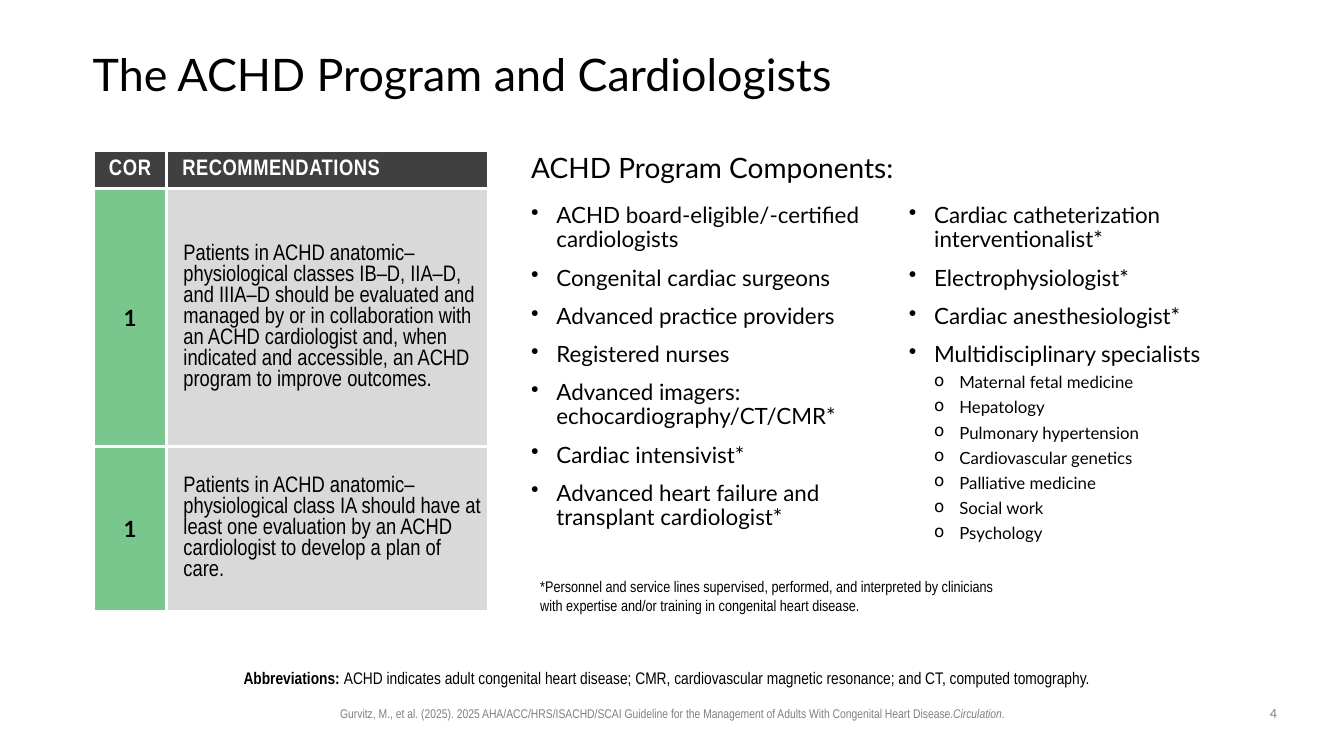
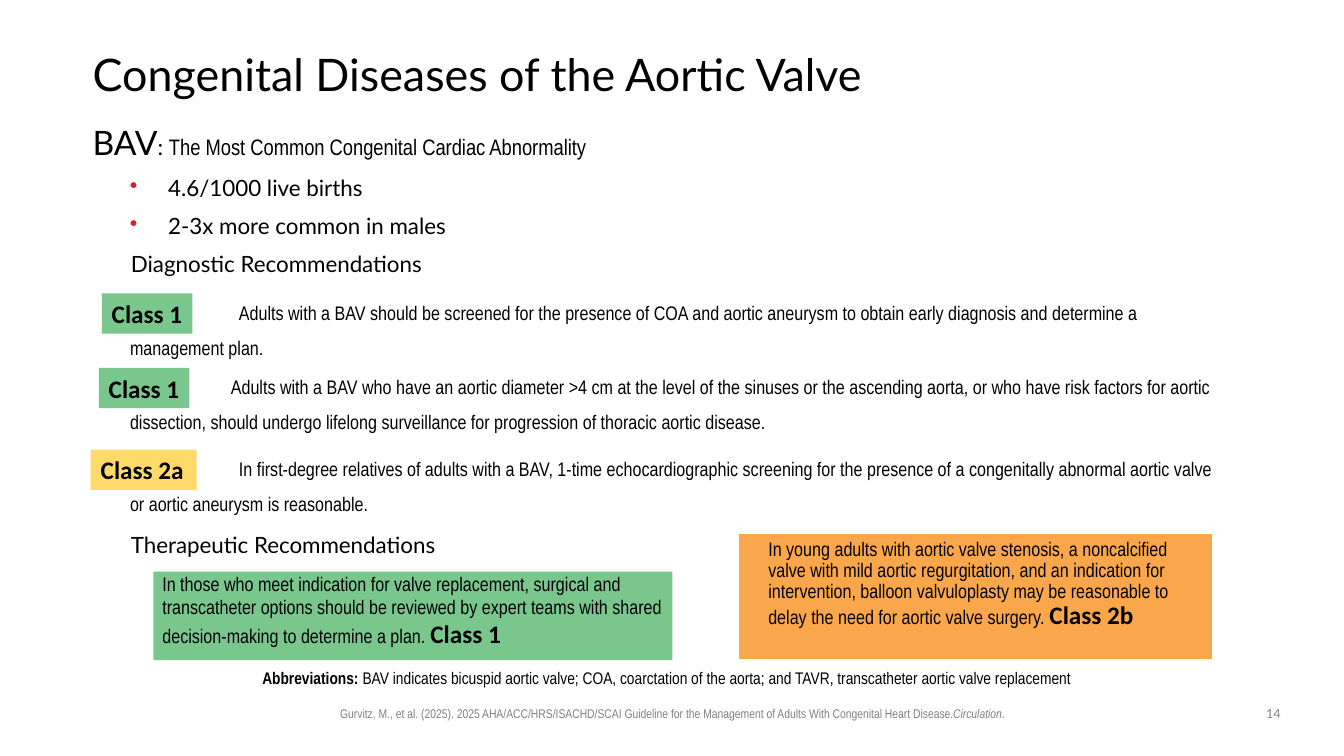
from dataclasses import dataclass

from lxml import etree
from pptx import Presentation
from pptx import util as u
from pptx.dml.color import RGBColor
from pptx.enum import shapes, text
from pptx.oxml import ns

ALIGN, ANCHOR = text.PP_ALIGN, text.MSO_ANCHOR


@dataclass(frozen=True)
class Theme:
    heading: str = "Lato"
    body: str = "Arial Narrow"
    label: str = "Calibri"
    black: str = "000000"
    white: str = "FFFFFF"
    grey: str = "808080"
    header: str = "404040"
    cell: str = "D9D9D9"
    green: str = "79C78D"
    yellow: str = "FFDA68"
    orange: str = "FAA74B"
    bullet: str = "CF242A"
    title_pt: int = 32
    lead_pt: int = 24
    subhead_pt: int = 20
    class_pt: int = 18
    text_pt: int = 16
    rec_pt: int = 14
    small_pt: int = 12
    note_pt: int = 11
    footer_pt: int = 9


T = Theme()
LABEL = dict(font=T.label, size=T.class_pt, bold=True)

COMPONENTS = [
    "ACHD board-eligible/-certified cardiologists",
    "Congenital cardiac surgeons",
    "Advanced practice providers",
    "Registered nurses",
    "Advanced imagers: echocardiography/CT/CMR*",
    "Cardiac intensivist*",
    "Advanced heart failure and transplant cardiologist*",
    "Cardiac catheterization interventionalist*",
    "Electrophysiologist*",
    "Cardiac anesthesiologist*",
    "Multidisciplinary specialists",
]
SPECIALISTS = [
    "Maternal fetal medicine", "Hepatology", "Pulmonary hypertension",
    "Cardiovascular genetics", "Palliative medicine", "Social work", "Psychology",
]
PROGRAM_RECS = [
    "Patients in ACHD anatomic–physiological classes IB–D, IIA–D, and IIIA–D should be "
    "evaluated and managed by or in collaboration with an ACHD cardiologist and, when "
    "indicated and accessible, an ACHD program to improve outcomes.",
    "Patients in ACHD anatomic–physiological class IA should have at least one evaluation "
    "by an ACHD cardiologist to develop a plan of care.",
]
# class, colour, badge left, top, width, start of the text, text
DIAGNOSTIC_RECS = [
    ("Class 1", T.green, 1.01, 2.91, 0.9, 2.37,
     "Adults with a BAV should be screened for the presence of COA and aortic aneurysm "
     "to obtain early diagnosis and determine a management plan."),
    ("Class 1", T.green, 0.98, 3.65, 0.9, 2.29,
     "Adults with a BAV who have an aortic diameter >4 cm at the level of the sinuses or "
     "the ascending aorta, or who have risk factors for aortic dissection, should undergo "
     "lifelong surveillance for progression of thoracic aortic disease."),
    ("Class 2a", T.yellow, 0.9, 4.46, 1.05, 2.37,
     "In first-degree relatives of adults with a BAV, 1-time echocardiographic screening "
     "for the presence of a congenitally abnormal aortic valve or aortic aneurysm is "
     "reasonable."),
]


def add_run(p, words, font=T.body, size=T.text_pt, color=T.black, bold=False,
            italic=False, tracking=0):
    r = p.add_run()
    r.text = words
    f = r.font
    f.name, f.size, f.bold, f.italic = font, u.Pt(size), bold, italic
    f.color.rgb = RGBColor.from_string(color)
    if tracking:
        r._r.get_or_add_rPr().set("spc", str(round(tracking * 100)))


def add_bullet(pPr, char, color):
    if color:
        clr = etree.SubElement(pPr, ns.qn("a:buClr"))
        etree.SubElement(clr, ns.qn("a:srgbClr"), val=color)
    etree.SubElement(pPr, ns.qn("a:buChar"), char=char)


def add_para(tf, runs, align=ALIGN.LEFT, line=None, before=0, left=0, first=0,
             level=0, bullet=None, bullet_color=None, **fmt):
    """Add a paragraph; runs is a string or a list of (string, format) pairs."""
    p = tf.paragraphs[0]
    if p.runs:
        p = tf.add_paragraph()
        p.space_before = u.Pt(before)
    p.alignment, p.level = align, level
    if line:
        p.line_spacing = line
    pPr = p._p.get_or_add_pPr()
    pPr.set("marL", str(u.Inches(left)))
    pPr.set("indent", str(u.Inches(first)))
    if bullet:
        add_bullet(pPr, bullet, bullet_color)
    for words, extra in [(runs, {})] if isinstance(runs, str) else runs:
        add_run(p, words, **{**fmt, **extra})


def set_frame(tf, insets=(0.1, 0.05, 0.1, 0.05), anchor=ANCHOR.TOP, wrap=True):
    tf.margin_left, tf.margin_top, tf.margin_right, tf.margin_bottom = map(u.Inches, insets)
    tf.vertical_anchor, tf.word_wrap = anchor, wrap
    return tf


def add_box(s, box, **frame):
    return set_frame(s.shapes.add_textbox(*map(u.Inches, box)).text_frame, **frame)


def add_panel(s, box, color, **frame):
    sp = s.shapes.add_shape(shapes.MSO_SHAPE.RECTANGLE, *map(u.Inches, box))
    sp.shadow.inherit = False
    sp.fill.solid()
    sp.fill.fore_color.rgb = RGBColor.from_string(color)
    sp.line.fill.background()
    return set_frame(sp.text_frame, **frame)


def add_slide(prs, title, abbreviations, number):
    """Add a slide with the title, abbreviations, citation and page number."""
    s = prs.slides.add_slide(prs.slide_layouts[6])
    tf = add_box(s, (0.92, 0.4, 11.5, 0.72), insets=(0, 0, 0, 0), anchor=ANCHOR.MIDDLE)
    add_para(tf, title, font=T.heading, size=T.title_pt, line=0.9)
    tf = add_box(s, (1.88, 6.42, 9.57, 0.46), insets=(0, 0.05, 0.1, 0.05),
                 anchor=ANCHOR.BOTTOM)
    add_para(tf, [("Abbreviations: ", dict(bold=True)), (abbreviations, {})],
             align=ALIGN.CENTER, line=0.9, size=T.small_pt)
    footer = dict(align=ALIGN.CENTER, size=T.footer_pt, color=T.grey)
    add_para(add_box(s, (2.36, 6.95, 8.62, 0.25)), [
        ("Gurvitz, M., et al. (2025). 2025 AHA/ACC/HRS/ISACHD/SCAI Guideline for the "
         "Management of Adults With Congenital Heart Disease.", {}),
        ("Circulation", dict(italic=True)), (".", {})], **footer)
    add_para(add_box(s, (12.42, 6.95, 0.42, 0.26)), str(number), font=T.heading, **footer)
    return s


def set_cell(cell, words, fill, inset=0.05, **fmt):
    cell.fill.solid()
    cell.fill.fore_color.rgb = RGBColor.from_string(fill)
    cell.vertical_anchor = ANCHOR.MIDDLE
    cell.margin_left = cell.margin_right = u.Inches(inset)
    cell.margin_top = cell.margin_bottom = u.Inches(0.05)
    add_para(cell.text_frame, words, **fmt)
    tcPr = cell._tc.get_or_add_tcPr()
    for i, side in enumerate(("lnL", "lnR", "lnT", "lnB")):
        ln = etree.Element(ns.qn("a:" + side), w=str(u.Pt(2.25)))
        solid = etree.SubElement(ln, ns.qn("a:solidFill"))
        etree.SubElement(solid, ns.qn("a:srgbClr"), val=T.white)
        tcPr.insert(i, ln)


def add_rec_table(s):
    widths, heights = (0.72, 3.19), (0.38, 2.56, 1.64)
    box = (0.93, 1.49, sum(widths), sum(heights))
    tbl = s.shapes.add_table(len(heights), len(widths), *map(u.Inches, box)).table
    tbl.horz_banding = False
    for col, w in zip(tbl.columns, widths):
        col.width = u.Inches(w)
    for row, h in zip(tbl.rows, heights):
        row.height = u.Inches(h)
    head = dict(fill=T.header, inset=0.1, color=T.white, bold=True)
    set_cell(tbl.cell(0, 0), "COR", align=ALIGN.CENTER, tracking=0.5, **head)
    set_cell(tbl.cell(0, 1), "RECOMMENDATIONS", left=0.06, tracking=0.4, **head)
    for i, rec in enumerate(PROGRAM_RECS, 1):
        set_cell(tbl.cell(i, 0), "1", T.green, align=ALIGN.CENTER, font=T.heading, bold=True)
        set_cell(tbl.cell(i, 1), rec, T.cell, left=0.12, line=u.Pt(15))


def add_component_list(s):
    tf = add_box(s, (5.17, 1.98, 7.49, 3.6))
    bodyPr = tf._txBody.bodyPr
    bodyPr.set("numCol", "2")
    bodyPr.set("spcCol", str(u.Inches(0.2)))
    style = dict(font=T.heading, line=0.9, first=-0.25)
    for item in COMPONENTS:
        add_para(tf, item, left=0.25, before=10, bullet="•", **style)
    for item in SPECIALISTS:
        add_para(tf, item, left=0.5, before=5, bullet="o", level=1, size=T.small_pt, **style)


def add_class_rec(s, name, color, left, top, width, start, words):
    """Add a class badge and its text, whose first line starts beside the badge."""
    margin, right = 1.29, 12.15
    tf = add_box(s, (margin, top - 0.04, right - margin, 0.72), insets=(0, 0, 0, 0))
    add_para(tf, words, size=T.rec_pt, first=start - margin, line=u.Pt(25))
    add_para(add_panel(s, (left, top, width, 0.4), color, wrap=False), name, **LABEL)


def build_program(prs):
    s = add_slide(prs, "The ACHD Program and Cardiologists",
                  "ACHD indicates adult congenital heart disease; CMR, cardiovascular "
                  "magnetic resonance; and CT, computed tomography.", 4)
    add_rec_table(s)
    add_para(add_box(s, (5.17, 1.48, 6.61, 0.45)), "ACHD Program Components:",
             font=T.heading, size=T.subhead_pt, line=0.9)
    add_component_list(s)
    add_para(add_box(s, (5.26, 5.68, 4.77, 0.47)),
             "*Personnel and service lines supervised, performed, and interpreted by "
             "clinicians with expertise and/or training in congenital heart disease.",
             size=T.note_pt)


def build_aortic_valve(prs):
    s = add_slide(prs, "Congenital Diseases of the Aortic Valve",
                  "BAV indicates bicuspid aortic valve; COA, coarctation of the aorta; and "
                  "TAVR, transcatheter aortic valve replacement", 14)
    style = dict(font=T.heading, line=0.9, before=10)
    tf = add_box(s, (0.82, 1.21, 11.5, 1.65))
    add_para(tf, [("BAV", dict(size=T.lead_pt)), (": ", {}),
                  ("The Most Common Congenital Cardiac Abnormality", dict(font=T.body))],
             **style)
    for fact in ("4.6/1000 live births", "2-3x more common in males"):
        add_para(tf, fact, left=0.75, first=-0.38, bullet="•", bullet_color=T.bullet, **style)
    add_para(tf, "Diagnostic Recommendations", left=0.38, **style)
    for rec in DIAGNOSTIC_RECS:
        add_class_rec(s, *rec)
    add_para(add_box(s, (0.82, 5.25, 5, 0.36)), "Therapeutic Recommendations",
             left=0.38, **style)

    tf = add_panel(s, (1.52, 5.67, 5.15, 0.88), T.green, insets=(0.09, 0, 0.03, 0))
    add_para(tf, [
        ("In those who meet indication for valve replacement, surgical and transcatheter "
         "options should be reviewed by expert teams with shared decision-making to "
         "determine a plan. ", {}), ("Class 1", LABEL)], size=T.rec_pt)
    tf = add_panel(s, (7.33, 5.3, 4.69, 1.24), T.orange, insets=(0.29, 0.05, 0.1, 0.05))
    add_para(tf, [
        ("In young adults with aortic valve stenosis, a noncalcified valve with mild aortic "
         "regurgitation, and an indication for intervention, balloon valvuloplasty may be "
         "reasonable to delay the need for aortic valve surgery. ", {}),
        ("Class 2b", LABEL)], size=T.rec_pt, line=0.9)


def main():
    prs = Presentation()
    prs.slide_width, prs.slide_height = u.Inches(13.33), u.Inches(7.5)
    build_program(prs)
    build_aortic_valve(prs)
    prs.save("out.pptx")


if __name__ == "__main__":
    main()
